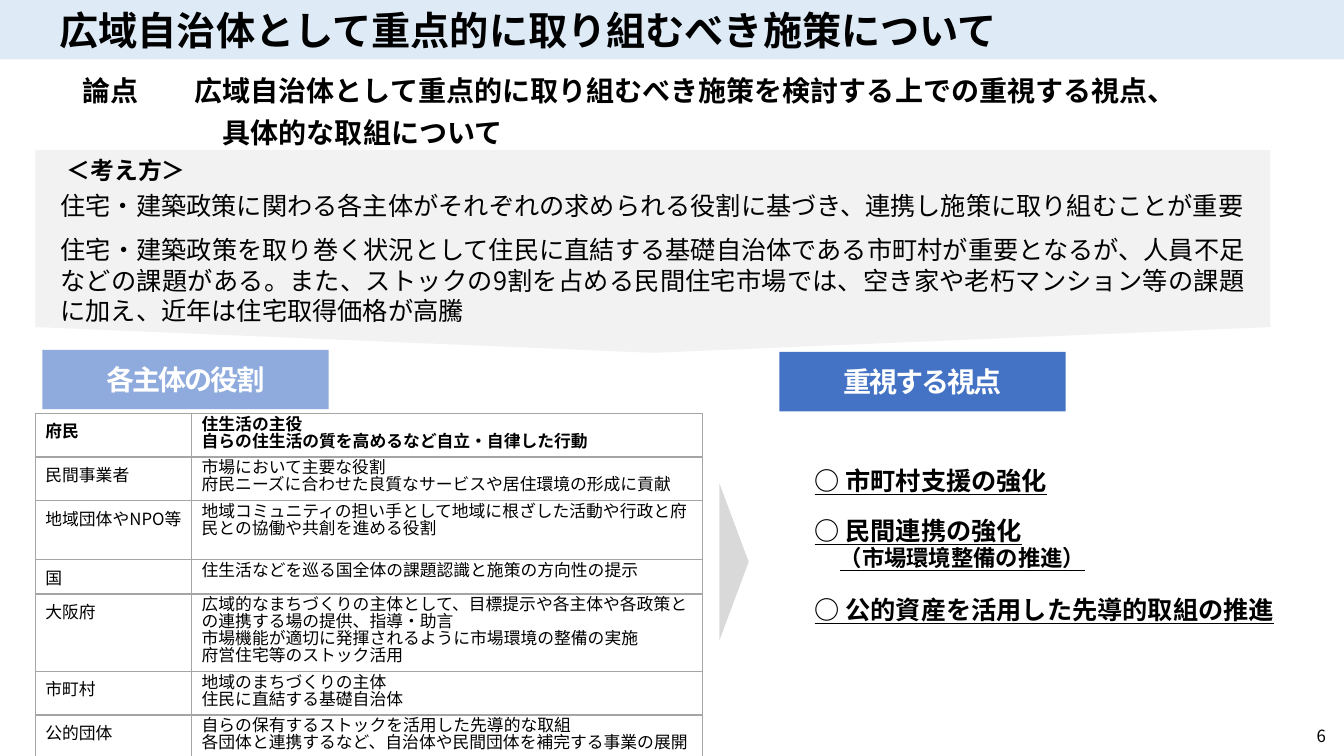
import pptx
import pptx.util
import pptx.dml.color
import pptx.enum.shapes
import pptx.enum.text
import pptx.oxml.ns
from lxml import etree

Inches, Pt = pptx.util.Inches, pptx.util.Pt
RGB = pptx.dml.color.RGBColor.from_string
SHAPE = pptx.enum.shapes.MSO_SHAPE
ALIGN = pptx.enum.text.PP_ALIGN
ANCHOR = pptx.enum.text.MSO_ANCHOR
qn = pptx.oxml.ns.qn

FONT = "Noto Sans CJK JP"
COLORS = {"black": "000000", "white": "FFFFFF", "bar": "DEEBF7",
          "panel": "F2F2F2", "arrow": "D9D9D9", "roles": "8FAADC",
          "views": "4472C4", "grid": "A5A5A5"}

TITLE = "広域自治体として重点的に取り組むべき施策について"
TOPIC = ["論点\t広域自治体として重点的に取り組むべき施策を検討する上での重視する視点、",
         "具体的な取組について"]
IDEAS_HEAD = "＜考え方＞"
IDEAS = [
    "住宅・建築政策に関わる各主体がそれぞれの求められる役割に基づき、連携し施策に取り組むことが重要",
    "住宅・建築政策を取り巻く状況として住民に直結する基礎自治体である市町村が重要となるが、"
    "人員不足などの課題がある。また、ストックの9割を占める民間住宅市場では、"
    "空き家や老朽マンション等の課題に加え、近年は住宅取得価格が高騰",
]
# label, left, top, fill
HEADS = [("各主体の役割", 0.42, 3.47, "roles"),
         ("重視する視点", 7.73, 3.49, "views")]
# actor, roles, row height
ROLES = [
    ("府民", ["住生活の主役", "自らの住生活の質を高めるなど自立・自律した行動"], 0.42),
    ("民間事業者", ["市場において主要な役割",
                "府民ニーズに合わせた良質なサービスや居住環境の形成に貢献"], 0.42),
    ("地域団体やNPO等",
     ["地域コミュニティの担い手として地域に根ざした活動や行政と府民との協働や共創を進める役割"], 0.42),
    ("国", ["住生活などを巡る国全体の課題認識と施策の方向性の提示"], 0.32),
    ("大阪府", ["広域的なまちづくりの主体として、目標提示や各主体や各政策との連携する場の提供、指導・助言",
             "市場機能が適切に発揮されるように市場環境の整備の実施",
             "府営住宅等のストック活用"], 0.75),
    ("市町村", ["地域のまちづくりの主体", "住民に直結する基礎自治体"], 0.42),
    ("公的団体", ["自らの保有するストックを活用した先導的な取組",
              "各団体と連携するなど、自治体や民間団体を補完する事業の展開"], 0.46),
]
COLS = [1.55, 5.07]
# text, size, line height, space before, left indent
VIEWS = [("○ 市町村支援の強化", 18, 20, 0, 0),
         ("○ 民間連携の強化", 18, 18, 18, 0),
         ("（市場環境整備の推進）", 16, 18, 0, 0.25),
         ("○ 公的資産を活用した先導的取組の推進", 18, 20, 18, 0)]
PAGE = "6"


def style(para, size, bold=False, color="black", align=None, left=0, first=0,
          before=0, line=None, under=False, track=None):
    para.alignment = align
    para.space_before = Pt(before)
    if line:
        para.line_spacing = Pt(line)
    props = para._p.get_or_add_pPr()
    props.set("marL", str(Inches(left)))
    props.set("indent", str(Inches(first)))
    for run in para.runs:
        font = run.font
        font.name, font.size, font.bold = FONT, Pt(size), bold
        font.underline = under
        font.color.rgb = RGB(COLORS[color])
        rpr = run._r.get_or_add_rPr()
        etree.SubElement(rpr, qn("a:ea")).set("typeface", FONT)
        if track:
            rpr.set("spc", str(track))


def fit(frame, insets, anchor=ANCHOR.TOP):
    frame.word_wrap = True
    frame.auto_size = pptx.enum.text.MSO_AUTO_SIZE.NONE
    frame.vertical_anchor = anchor
    (frame.margin_left, frame.margin_top,
     frame.margin_right, frame.margin_bottom) = map(Inches, insets)


def write(box, lines, insets=(0, 0.12, 0, 0), anchor=ANCHOR.TOP):
    text = slide.shapes.add_textbox(*map(Inches, box)).text_frame
    fit(text, insets, anchor)
    text.text = "\n".join(lines)
    return text.paragraphs


def block(kind, box, color, turn=0):
    shape = slide.shapes.add_shape(kind, *map(Inches, box))
    shape.shadow.inherit = False
    shape.fill.solid()
    shape.fill.fore_color.rgb = RGB(COLORS[color])
    shape.line.fill.background()
    shape.rotation = turn
    return shape


def outline(cell):
    props = cell._tc.get_or_add_tcPr()
    for place, side in enumerate(("lnL", "lnR", "lnT", "lnB")):
        line = etree.Element(qn("a:" + side), w=str(Pt(1)))
        fill = etree.SubElement(line, qn("a:solidFill"))
        etree.SubElement(fill, qn("a:srgbClr")).set("val", COLORS["grid"])
        props.insert(place, line)


deck = pptx.Presentation()
deck.slide_width, deck.slide_height = Inches(13.33), Inches(7.5)
slide = deck.slides.add_slide(deck.slide_layouts[5])

# Title bar
title = slide.shapes.title
title.left, title.top = Inches(0), Inches(0)
title.width, title.height = deck.slide_width, Inches(0.59)
title.fill.solid()
title.fill.fore_color.rgb = RGB(COLORS["bar"])
fit(title.text_frame, (0, 0, 0, 0), ANCHOR.MIDDLE)
title.text_frame.text = TITLE
style(title.text_frame.paragraphs[0], 28, True, align=ALIGN.LEFT, left=0.59)

# Topic
topic = write((0.54, 0.61, 12.34, 0.97), TOPIC)
for para, left, first in zip(topic, (1.39, 1.67), (-1.11, 0)):
    style(para, 20, True, align=ALIGN.LEFT, left=left, first=first, before=6)

# Ideas panel
panel = block(SHAPE.PENTAGON, (5.47, -3.63, 2.01, 12.25), "panel", 90)
panel.adjustments[0] = 0.127
for para in write((0.6, 1.77, 11.75, 1.48), IDEAS):
    style(para, 18, align=ALIGN.JUSTIFY, before=10)
for para in write((0.42, 1.42, 2.13, 0.53), [IDEAS_HEAD]):
    style(para, 17, True, align=ALIGN.JUSTIFY, left=0.24, before=10)

# Section heads
for label, left, top, color in HEADS:
    text = block(SHAPE.RECTANGLE, (left, top, 2.84, 0.59), color).text_frame
    fit(text, (0, 0, 0, 0), ANCHOR.MIDDLE)
    text.text = label
    style(text.paragraphs[0], 20, True, "white", ALIGN.CENTER, track=-150)

# Roles table
frame = slide.shapes.add_table(
    len(ROLES), len(COLS), Inches(0.35), Inches(4.1),
    Inches(sum(COLS)), Inches(sum(role[2] for role in ROLES)))
table = frame.table
table.first_row = table.horz_banding = False
for col, width in zip(table.columns, COLS):
    col.width = Inches(width)
for num, (actor, roles, height) in enumerate(ROLES):
    table.rows[num].height = Inches(height)
    for cell, lines, line in zip(table.rows[num].cells, ([actor], roles), (None, 12)):
        cell.fill.background()
        outline(cell)
        cell.text_frame.text = "\n".join(lines)
        for para in cell.text_frame.paragraphs:
            style(para, 12, num == 0, line=line)

# Arrow and views
block(SHAPE.ISOSCELES_TRIANGLE, (6.5, 5.43, 1.56, 0.29), "arrow", 90)
views = write((7.98, 4.59, 5.18, 1.67), [view[0] for view in VIEWS],
              (0.1, 0.05, 0.1, 0.05))
for para, (_, size, line, before, left) in zip(views, VIEWS):
    style(para, size, True, left=left, before=before, line=line, under=True)

# Page number
page = write((10.92, 7.1, 2.33, 0.4), [PAGE], (0.1, 0.05, 0.1, 0.05), ANCHOR.MIDDLE)
style(page[0], 12, align=ALIGN.RIGHT)

deck.save("out.pptx")
